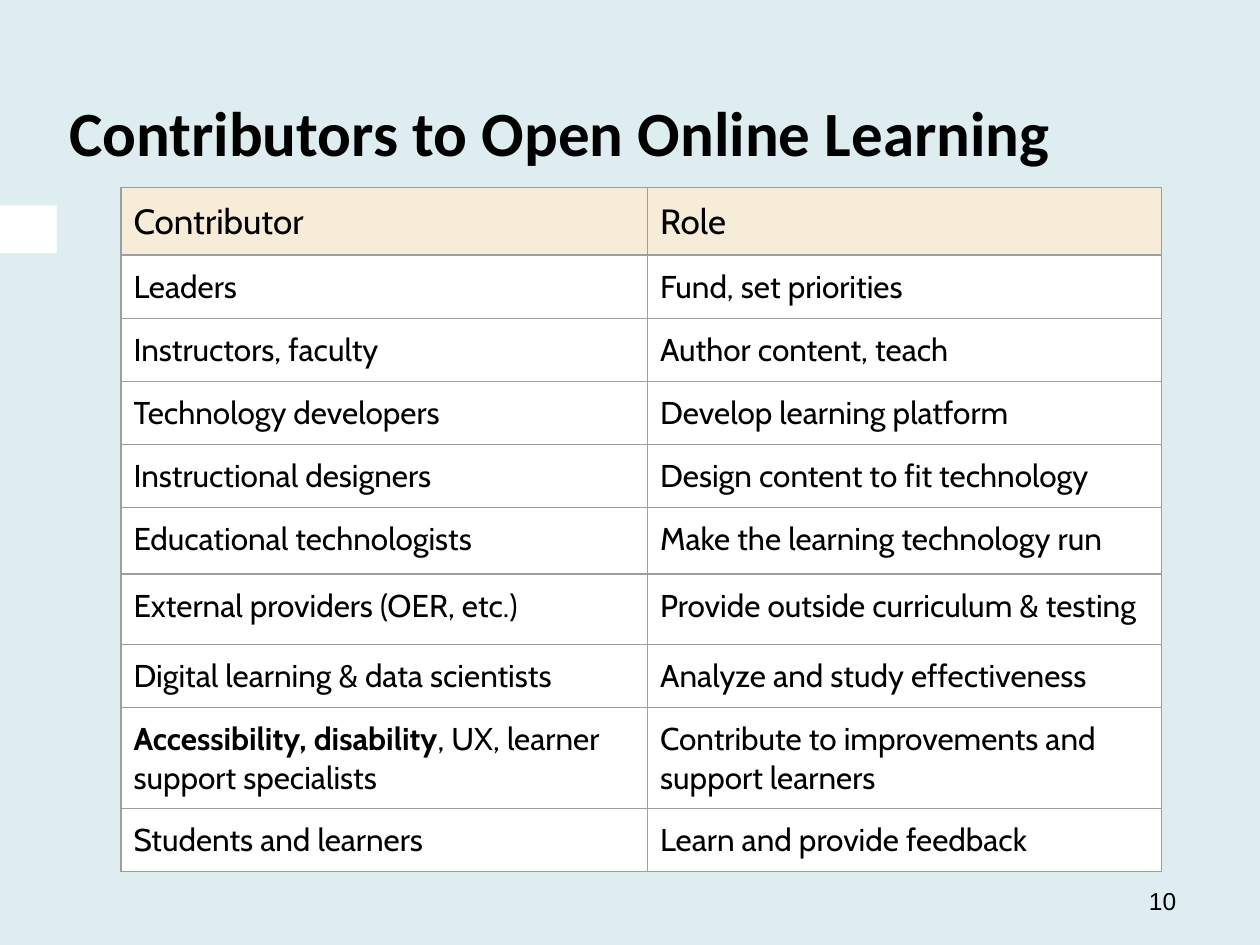
from dataclasses import dataclass

from lxml import etree
from pptx import Presentation
from pptx import util as u
from pptx.dml.color import RGBColor
from pptx.enum import shapes, text
from pptx.oxml.ns import qn


@dataclass(frozen=True)
class Theme:
    background: str = "DDEDF0"
    ink: str = "000000"
    paper: str = "FFFFFF"
    header: str = "F7ECD7"
    border: str = "9E9E9E"
    border_width: float = 0.75
    inset: float = 0.1
    title_font: str = "Calibri"
    table_font: str = "Cabin"
    number_font: str = "Arial"
    title_size: int = 36
    header_size: int = 20
    body_size: int = 18
    number_size: int = 14


HEADINGS = ("Contributor", "Role")
EMPHASIS = "Accessibility, disability"
CONTRIBUTORS = [  # contributor, role, row height in inches
    ("Leaders", "Fund, set priorities", 0.5),
    ("Instructors, faculty", "Author content, teach", 0.5),
    ("Technology developers", "Develop learning platform", 0.5),
    ("Instructional designers", "Design content to fit technology", 0.5),
    ("Educational technologists", "Make the learning technology run", 0.53),
    ("External providers (OER, etc.)", "Provide outside curriculum & testing", 0.56),
    ("Digital learning & data scientists", "Analyze and study effectiveness", 0.5),
    (EMPHASIS + ", UX, learner support specialists",
     "Contribute to improvements and support learners", 0.8),
    ("Students and learners", "Learn and provide feedback", 0.5),
]


class SlideBuilder:
    def __init__(self, slide, theme):
        self.slide = slide
        self.theme = theme
        self.paint(slide.background.fill, theme.background)

    def paint(self, fill, color):
        fill.solid()
        fill.fore_color.rgb = RGBColor.from_string(color)

    def inset(self, holder):
        margin = u.Inches(self.theme.inset)
        holder.margin_left = holder.margin_right = margin
        holder.margin_top = holder.margin_bottom = margin

    def set_wording(self, frame, wording, font, size, bold=False):
        """Set the wording, with a leading EMPHASIS phrase in a bold run of its own."""
        paragraph = frame.paragraphs[0]
        if wording.startswith(EMPHASIS):
            paragraph.text = EMPHASIS
            paragraph.add_run().text = wording.removeprefix(EMPHASIS)
        else:
            paragraph.text = wording
        for run in paragraph.runs:
            run.font.name = font
            run.font.size = u.Pt(size)
            run.font.bold = bold or run.text == EMPHASIS
            run.font.color.rgb = RGBColor.from_string(self.theme.ink)

    def block(self, box, color):
        tab = self.slide.shapes.add_shape(
            shapes.MSO_SHAPE.RECTANGLE, *map(u.Inches, box))
        tab.shadow.inherit = False
        self.paint(tab.fill, color)
        tab.line.fill.background()

    def label(self, box, wording, font, size, bold=False,
              anchor=text.MSO_ANCHOR.TOP):
        frame = self.slide.shapes.add_textbox(*map(u.Inches, box)).text_frame
        frame.word_wrap = True
        frame.vertical_anchor = anchor
        self.inset(frame)
        self.set_wording(frame, wording, font, size, bold)

    def outline(self, cell):
        """Draw all four borders; they must come before the cell's fill."""
        properties = cell._tc.get_or_add_tcPr()
        for position, tag in enumerate(("a:lnL", "a:lnR", "a:lnT", "a:lnB")):
            line = etree.Element(qn(tag), w=str(u.Pt(self.theme.border_width)))
            fill = etree.SubElement(line, qn("a:solidFill"))
            etree.SubElement(fill, qn("a:srgbClr"), val=self.theme.border)
            properties.insert(position, line)

    def table(self, left, top, widths, heights, rows):
        """Build a grid whose first row is the header."""
        box = (left, top, sum(widths), sum(heights))
        grid = self.slide.shapes.add_table(
            len(rows), len(widths), *map(u.Inches, box)).table
        grid.first_row = grid.horz_banding = False
        for column, width in zip(grid.columns, widths):
            column.width = u.Inches(width)
        for index, (row, height, wordings) in enumerate(zip(grid.rows, heights, rows)):
            row.height = u.Inches(height)
            color, size = ((self.theme.paper, self.theme.body_size) if index
                           else (self.theme.header, self.theme.header_size))
            for cell, wording in zip(row.cells, wordings):
                self.inset(cell)
                self.paint(cell.fill, color)
                self.outline(cell)
                self.set_wording(cell.text_frame, wording, self.theme.table_font, size)


def main():
    deck = Presentation()
    deck.slide_width, deck.slide_height = u.Inches(10), u.Inches(7.5)
    theme = Theme()
    builder = SlideBuilder(deck.slides.add_slide(deck.slide_layouts[6]), theme)

    builder.block((0, 1.63, 0.45, 0.38), theme.paper)
    builder.label((0.45, 0.46, 9.27, 1.17), "Contributors to Open Online Learning",
                  theme.title_font, theme.title_size, bold=True,
                  anchor=text.MSO_ANCHOR.MIDDLE)
    builder.label((9.02, 6.93, 0.6, 0.57), "10",
                  theme.number_font, theme.number_size)
    builder.table(0.96, 1.49, (4.18, 4.08),
                  [0.5] + [height for *_, height in CONTRIBUTORS],
                  [HEADINGS] + [wordings for *wordings, _ in CONTRIBUTORS])
    deck.save("out.pptx")


if __name__ == "__main__":
    main()
